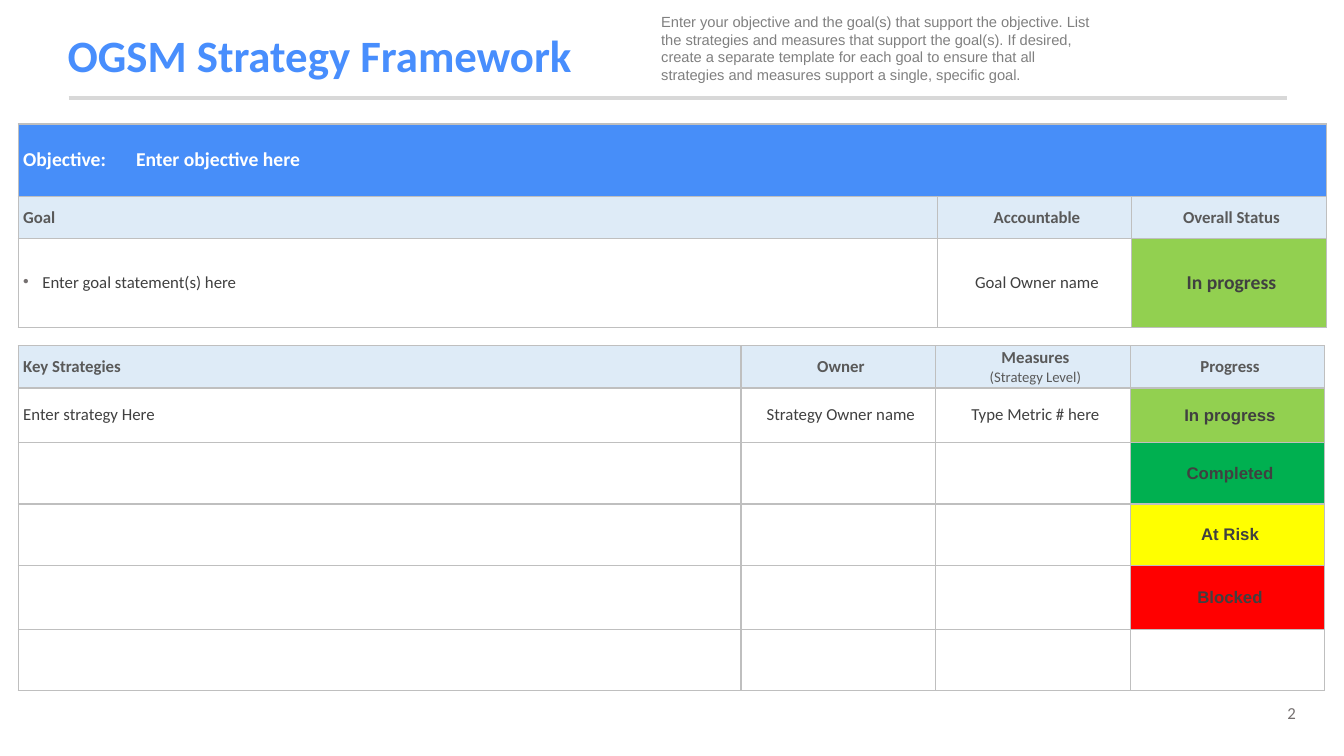
from lxml import etree
from pptx import Presentation
from pptx.dml.color import RGBColor
from pptx.enum.shapes import MSO_CONNECTOR
from pptx.enum.text import MSO_ANCHOR, MSO_AUTO_SIZE, PP_ALIGN
from pptx.oxml.ns import qn
from pptx.util import Inches, Pt

LEFT, CENTER, RIGHT = PP_ALIGN.LEFT, PP_ALIGN.CENTER, PP_ALIGN.RIGHT
MIDDLE = MSO_ANCHOR.MIDDLE
NO_FIT = MSO_AUTO_SIZE.NONE
STRAIGHT = MSO_CONNECTOR.STRAIGHT
TITLE_ONLY = 5
GRID_STEP = 0.1

COLORS = {
    "title": "488EFD", "objective": "478EF9", "header": "DEEBF7", "white": "FFFFFF",
    "progress": "92D050", "completed": "00B050", "risk": "FFFF00", "blocked": "FF0000",
    "border": "BFBFBF", "rule": "D8D8D8", "heading": "595959", "body": "404040",
    "note": "808080", "muted": "757070",
}

STYLES = {
    "title": ("Calibri", 32, True, "title"),
    "objective": ("Calibri", 14, True, "white"),
    "heading": ("Calibri", 12, True, "heading"),
    "subheading": ("Calibri", 10.5, False, "heading"),
    "body": ("Calibri", 12, False, "body"),
    "overall": ("Calibri", 14, True, "body"),
    "status": ("Arial", 12, True, "body"),
    "note": ("Arial", 10.5, False, "note"),
    "number": ("Calibri", 12, False, "muted"),
}

NOTE = ("Enter your objective and the goal(s) that support the objective. "
        "List the strategies and measures that support the goal(s). If desired, "
        "create a separate template for each goal to ensure that all strategies "
        "and measures support a single, specific goal.")


def grid(steps):
    return Inches(steps * GRID_STEP)


def add_color(parent, name):
    fill = etree.SubElement(parent, qn("a:solidFill"))
    etree.SubElement(fill, qn("a:srgbClr"), val=COLORS[name])


class FrameworkPage:
    """Draw styled elements on one slide, measured in grid columns and rows."""

    def __init__(self, deck):
        self.page = deck.slides.add_slide(deck.slide_layouts[TITLE_ONLY])

    def add_span(self, para, text, style, align=LEFT):
        para.alignment = align
        span = para.add_run()
        span.text = text
        name, size, bold, color = STYLES[style]
        for key, value in {"name": name, "size": Pt(size), "bold": bold}.items():
            setattr(span.font, key, value)
        span.font.color.rgb = RGBColor.from_string(COLORS[color])

    def title(self, text, left, top, width, height):
        box = self.page.shapes.title
        places = {"left": left, "top": top, "width": width, "height": height}
        for key, value in places.items():
            setattr(box, key, grid(value))
        frame = box.text_frame
        for key, value in {"auto_size": NO_FIT, "vertical_anchor": MIDDLE}.items():
            setattr(frame, key, value)
        frame.paragraphs[0].line_spacing = 0.9
        self.add_span(frame.paragraphs[0], text, "title")

    def text(self, text, style, left, top, width, height, align=LEFT):
        box = self.page.shapes.add_textbox(*map(grid, (left, top, width, height)))
        box.text_frame.word_wrap = True
        self.add_span(box.text_frame.paragraphs[0], text, style, align)

    def rule(self, left, right, top):
        line = self.page.shapes.add_connector(STRAIGHT, *map(grid, (left, top, right, top)))
        line.line.color.rgb = RGBColor.from_string(COLORS["rule"])
        line.line.width = Pt(3)
        etree.SubElement(line._element.spPr, qn("a:effectLst"))

    def table(self, left, top, columns, rows):
        places = map(grid, (left, top, sum(columns), sum(rows)))
        table = self.page.shapes.add_table(len(rows), len(columns), *places).table
        table.first_row = table.horz_banding = False
        for column, width in zip(table.columns, columns):
            column.width = grid(width)
        for row, height in zip(table.rows, rows):
            row.height = grid(height)
            for cell in row.cells:
                self.paint(cell, "white")
                self.borders(cell)
        return table

    def paint(self, cell, color):
        cell.fill.solid()
        cell.fill.fore_color.rgb = RGBColor.from_string(COLORS[color])

    def borders(self, cell):
        properties = cell._tc.get_or_add_tcPr()
        for index, side in enumerate("LRTB"):
            line = etree.Element(qn(f"a:ln{side}"), w=str(Pt(1)))
            add_color(line, "border")
            properties.insert(index, line)

    def hide_border(self, cell, side):
        line = cell._tc.tcPr.find(qn(f"a:ln{side}"))
        line.remove(line[0])
        etree.SubElement(line, qn("a:noFill"))

    def cell(self, cell, lines, fill, align=CENTER):
        self.paint(cell, fill)
        margins = {"margin_left": grid(0.5), "margin_right": 0, "margin_top": 0,
                   "margin_bottom": 0, "vertical_anchor": MIDDLE}
        for key, value in margins.items():
            setattr(cell, key, value)
        frame = cell.text_frame
        for index, (text, style) in enumerate(lines):
            para = frame.add_paragraph() if index else frame.paragraphs[0]
            self.add_span(para, text, style, align)

    def indent(self, cell, margin, bullet=None):
        properties = cell.text_frame.paragraphs[0]._p.get_or_add_pPr()
        properties.set("marL", str(grid(margin)))
        properties.set("indent", str(-grid(margin) if bullet else 0))
        if bullet:
            color = etree.SubElement(properties, qn("a:buClr"))
            etree.SubElement(color, qn("a:srgbClr"), val=COLORS["muted"])
            etree.SubElement(properties, qn("a:buChar"), char=bullet)


def draw_goals(page):
    goals = page.table(1.8, 12.3, (9.9, 81.3, 19.2, 19.4), (7.2, 4.2, 8.8))
    label, objective = goals.cell(0, 0), goals.cell(0, 1)
    for column in range(4):
        page.paint(goals.cell(0, column), "objective")
    page.hide_border(label, "R")
    page.hide_border(objective, "L")
    objective.merge(goals.cell(0, 3))
    page.cell(label, [("Objective:", "objective")], "objective", LEFT)
    page.cell(objective, [("Enter objective here", "objective")], "objective", LEFT)
    page.indent(objective, 1.3)

    for row in (1, 2):
        goals.cell(row, 0).merge(goals.cell(row, 1))
    for column, text in ((0, "Goal"), (2, "Accountable"), (3, "Overall Status")):
        align = CENTER if column else LEFT
        page.cell(goals.cell(1, column), [(text, "heading")], "header", align)
    page.cell(goals.cell(2, 0), [("Enter goal statement(s) here", "body")], "white", LEFT)
    page.indent(goals.cell(2, 0), 1.9, "•")
    page.cell(goals.cell(2, 2), [("Goal Owner name", "body")], "white")
    page.cell(goals.cell(2, 3), [("In progress", "overall")], "progress")


def draw_strategies(page):
    heights = (4.2, 5.4, 6.1, 6.1, 6.4, 6)
    strategies = page.table(1.8, 34.3, (71.7, 19.3, 19.3, 19.3), heights)
    headings = (
        [("Key Strategies", "heading")],
        [("Owner", "heading")],
        [("Measures", "heading"), ("(Strategy Level)", "subheading")],
        [("Progress", "heading")],
    )
    entries = ("Enter strategy Here", "Strategy Owner name", "Type Metric # here")
    statuses = (("In progress", "progress"), ("Completed", "completed"),
                ("At Risk", "risk"), ("Blocked", "blocked"))
    for column, lines in enumerate(headings):
        align = CENTER if column else LEFT
        page.cell(strategies.cell(0, column), lines, "header", align)
    for column, text in enumerate(entries):
        align = CENTER if column else LEFT
        page.cell(strategies.cell(1, column), [(text, "body")], "white", align)
    for row, (text, fill) in enumerate(statuses, 1):
        page.cell(strategies.cell(row, 3), [(text, "status")], fill)


def main():
    deck = Presentation()
    deck.slide_width, deck.slide_height = Inches(13.33), Inches(7.5)
    page = FrameworkPage(deck)
    page.text("2", "number", 119.3, 69.2, 10.2, 3, RIGHT)
    page.rule(6.8, 127.6, 9.7)
    page.title("OGSM Strategy Framework", 5.7, 1.9, 109.4, 7.7)
    draw_goals(page)
    draw_strategies(page)
    page.text(NOTE, "note", 64.6, 0.8, 45.6, 8.1)
    deck.save("out.pptx")


if __name__ == "__main__":
    main()
